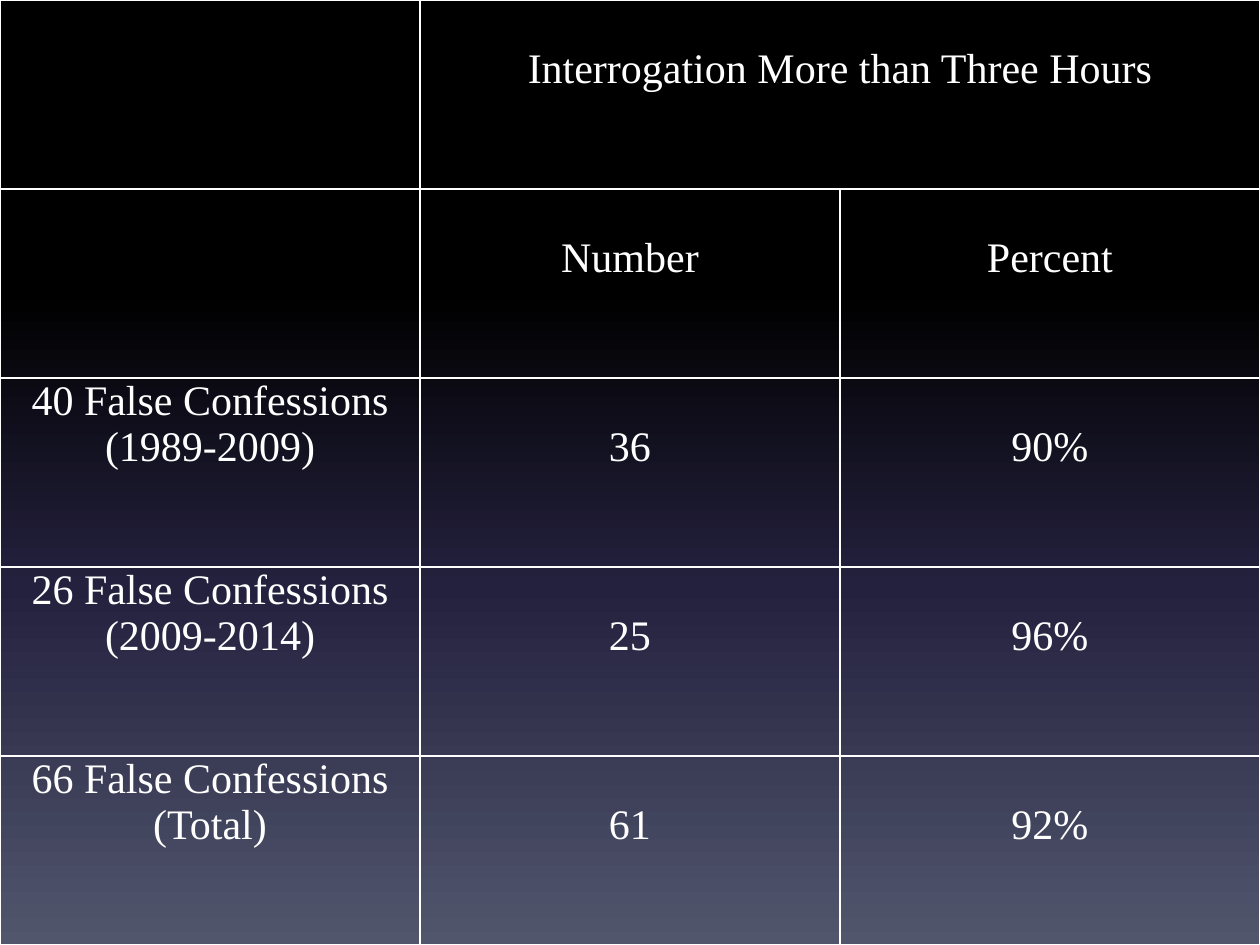
from lxml import etree
from pptx import Presentation
from pptx import util as u
from pptx.dml.color import RGBColor
from pptx.enum import text
from pptx.oxml.ns import qn

PX = 914400 / 126
COLORS = {"ink": "FFFFFF", "night": "000000", "violet": "24213E", "slate": "51566D"}
SKY = [(0, "night"), (31, "night"), (62, "violet"), (100, "slate")]
FONT = "Times New Roman"
LINE_HEIGHT = 46
SIDE_MARGIN = 9
ROWS = [
    ["", "Interrogation More than Three Hours", ""],
    ["", "Number", "Percent"],
    ["40 False Confessions (1989-2009)", "36", "90%"],
    ["26 False Confessions (2009-2014)", "25", "96%"],
    ["66 False Confessions (Total)", "61", "92%"],
]


def px(length):
    return u.Emu(round(length * PX))


def paint_background(slide):
    fill = slide.background.fill
    fill.gradient()
    fill.gradient_angle = 270
    stops = slide.element.find(".//" + qn("a:gsLst"))
    for stop in list(stops):
        stops.remove(stop)
    for percent, color in SKY:
        stop = etree.SubElement(stops, qn("a:gs"), pos=str(percent * 1000))
        etree.SubElement(stop, qn("a:srgbClr"), val=COLORS[color])


def draw_borders(cell):
    properties = cell._tc.get_or_add_tcPr()
    for side in ("lnL", "lnR", "lnT", "lnB"):
        line = etree.SubElement(properties, qn("a:" + side), w=str(u.Pt(1)))
        solid = etree.SubElement(line, qn("a:solidFill"))
        etree.SubElement(solid, qn("a:srgbClr"), val=COLORS["ink"])


def fill_cell(cell, wording, top):
    draw_borders(cell)
    cell.fill.background()
    cell.margin_left = cell.margin_right = px(SIDE_MARGIN)
    cell.margin_top, cell.margin_bottom = px(top), 0
    if not wording:
        return
    cell.text_frame.text = wording
    paragraph = cell.text_frame.paragraphs[0]
    paragraph.alignment = text.PP_ALIGN.CENTER
    font = paragraph.runs[0].font
    font.name, font.size = FONT, u.Pt(24)
    font.color.rgb = RGBColor.from_string(COLORS["ink"])


def add_confessions(slide, left, top, width, height):
    frame = slide.shapes.add_table(len(ROWS), len(ROWS[0]), px(left), px(top), px(width), px(height))
    confessions = frame.table
    confessions.first_row = confessions.horz_banding = False
    for r, row in enumerate(ROWS):
        for c, wording in enumerate(row):
            fill_cell(confessions.cell(r, c), wording, LINE_HEIGHT if c else 0)
    confessions.cell(0, 1).merge(confessions.cell(0, 2))


def main():
    deck = Presentation()
    deck.slide_width, deck.slide_height = px(1260), px(945)
    slide = deck.slides.add_slide(deck.slide_layouts[6])
    paint_background(slide)
    add_confessions(slide, 0, 0, 1260, 945)
    deck.save("out.pptx")


if __name__ == "__main__":
    main()
